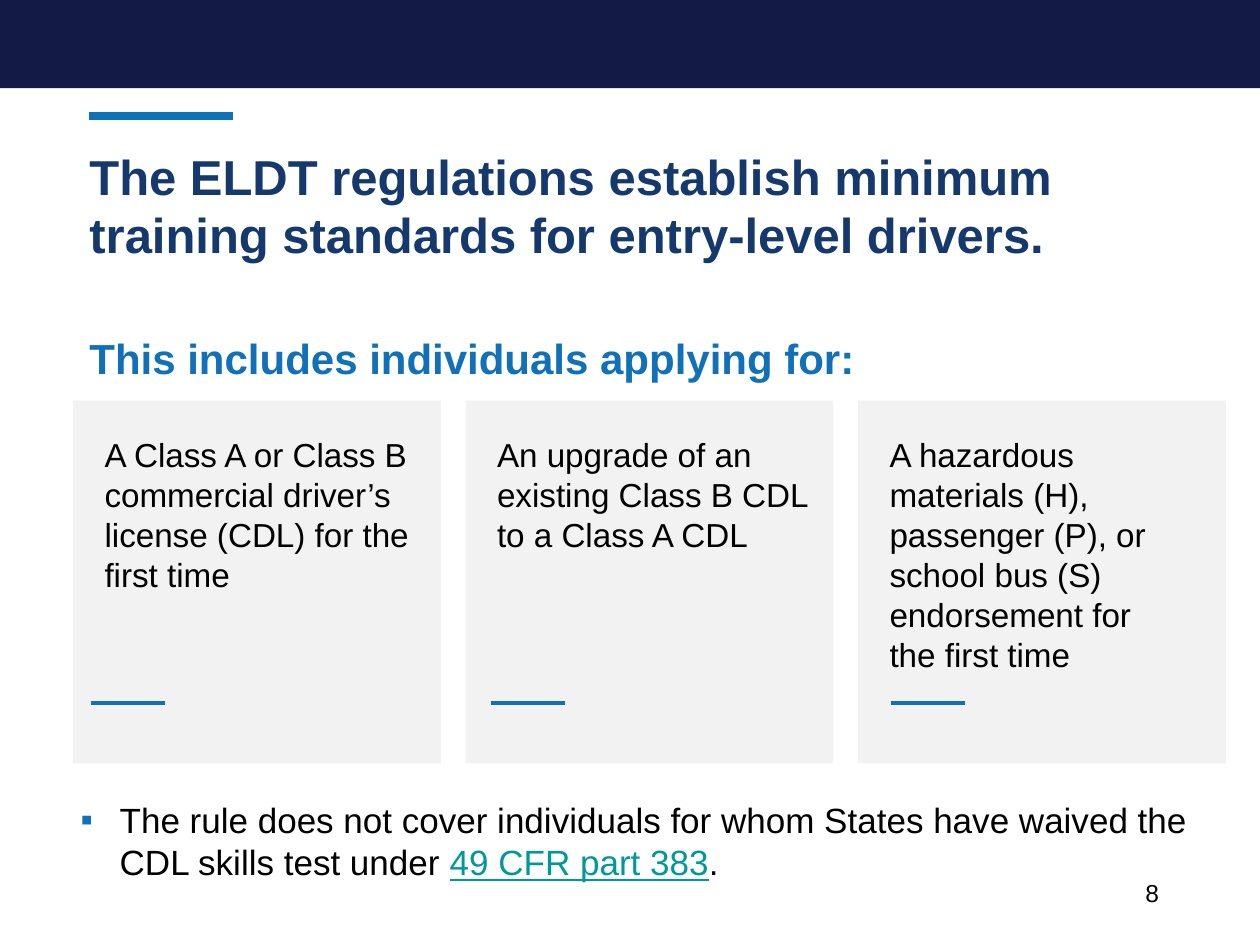
from lxml import etree
from pptx import Presentation
from pptx.dml.color import RGBColor
from pptx.enum.shapes import MSO_CONNECTOR, MSO_SHAPE
from pptx.enum.text import MSO_ANCHOR, MSO_AUTO_SIZE, PP_ALIGN
from pptx.oxml.ns import qn
from pptx.util import Inches, Pt

RECTANGLE = MSO_SHAPE.RECTANGLE
STRAIGHT = MSO_CONNECTOR.STRAIGHT
TOP = MSO_ANCHOR.TOP
LEFT = PP_ALIGN.LEFT
NO_FIT = MSO_AUTO_SIZE.NONE

WIDTH, HEIGHT = Inches(10), Inches(7.5)
COLUMN, ROW = WIDTH / 100, HEIGHT / 75

NAVY, HEADING, ACCENT = "121A45", "15396C", "1071B9"
RULE, PANEL, LINK, BLACK = "0C72B9", "F2F2F2", "009999", "000000"

HEADLINE = "The ELDT regulations establish minimum training standards for entry-level drivers."
APPLICATIONS = [
    "A Class A or Class B commercial driver’s license (CDL) for the first time",
    "An upgrade of an existing Class B CDL to a Class A CDL",
    "A hazardous materials (H), passenger (P), or school bus (S) endorsement for\nthe first time",
]
EXEMPTION = [
    ("The rule does not cover individuals for whom States have waived the CDL skills test under ", BLACK, False),
    ("49 CFR part 383", LINK, True),
    (".", BLACK, False),
]


def colour(hex_value):
    """Turn a hex string into a colour."""
    return RGBColor.from_string(hex_value)


def place(box):
    """Convert a box in grid columns and rows to slide lengths."""
    left, top, width, height = box
    return [round(n) for n in (left * COLUMN, top * ROW, width * COLUMN, height * ROW)]


def apply(target, formats):
    """Set each attribute named in a dict of format values."""
    for name, value in formats.items():
        setattr(target, name, value)


def frame(holder, insets=(0, 0, 0, 0)):
    """Prepare a wrapping, top-anchored text frame and return it."""
    left, top, right, bottom = map(Inches, insets)
    apply(holder.text_frame, dict(
        word_wrap=True, auto_size=NO_FIT, vertical_anchor=TOP, margin_left=left,
        margin_top=top, margin_right=right, margin_bottom=bottom))
    return holder.text_frame


def write(paragraph, text, size, hex_value=BLACK, bold=False, underline=False):
    """Add formatted text to a paragraph, with a line break at each newline."""
    for index, line in enumerate(text.split("\n")):
        if index:
            paragraph.add_line_break()
        run = paragraph.add_run()
        run.text = line
        apply(run.font, dict(name="Arial", size=Pt(size), bold=bold, underline=underline))
        run.font.color.rgb = colour(hex_value)


def add_panel(slide, box, hex_value):
    """Draw a plain filled rectangle."""
    panel = slide.shapes.add_shape(RECTANGLE, *place(box))
    panel.shadow.inherit = False
    panel.fill.solid()
    panel.fill.fore_color.rgb = colour(hex_value)
    panel.line.fill.background()
    return panel


def add_rule(slide, left, top, length, hex_value, weight):
    """Draw a horizontal accent rule."""
    x, y, width, _ = place((left, top, length, 0))
    rule = slide.shapes.add_connector(STRAIGHT, x, y, x + width, y)
    rule.line.color.rgb = colour(hex_value)
    rule.line.width = Pt(weight)
    etree.SubElement(rule._element.spPr, qn("a:effectLst"))


def add_banner(slide, box):
    """Draw the top band and the short rule beneath it."""
    add_panel(slide, box, NAVY)
    add_rule(slide, 7.1, box[1] + box[3] + 2.2, 11.4, RULE, 4.5)


def add_headings(slide, box):
    """Place the title and the subheading below it."""
    left, top, width, height = box
    title = slide.shapes.title
    apply(title, dict(zip(("left", "top", "width", "height"), place((left, top, width, 10)))))
    headline = frame(title).paragraphs[0]
    apply(headline, dict(alignment=LEFT, line_spacing=1.0, space_before=Pt(0)))
    write(headline, HEADLINE, 28, HEADING, bold=True)
    subheading = slide.shapes.add_textbox(*place((left, top + height - 4, width, 4)))
    write(frame(subheading).paragraphs[0], "This includes individuals applying for:", 24, ACCENT, bold=True)


def add_cards(slide, box):
    """Spread the application cards evenly across the box."""
    left, top, width, height = box
    card_width = 29.2
    pitch = (width - card_width) / (len(APPLICATIONS) - 1)
    for index, application in enumerate(APPLICATIONS):
        card = add_panel(slide, (left + index * pitch, top, card_width, height), PANEL)
        paragraph = frame(card, (0.25, 0.27, 0.1, 0.05)).paragraphs[0]
        paragraph.alignment = LEFT
        write(paragraph, application, 19)
        add_rule(slide, left + 1.4 + index * 31.75, top + 24, 5.9, ACCENT, 2.25)


def add_exemption(slide, box):
    """Write the bulleted note on who is not covered."""
    note = slide.shapes.add_textbox(*place(box))
    paragraph = frame(note).paragraphs[0]
    properties = paragraph._p.get_or_add_pPr()
    hanging = Inches(0.31)
    for name, value in dict(marL=hanging, indent=-hanging).items():
        properties.set(name, str(value))
    bullet_colour = etree.SubElement(properties, qn("a:buClr"))
    etree.SubElement(bullet_colour, qn("a:srgbClr"), val=ACCENT)
    etree.SubElement(properties, qn("a:buFont"), typeface="Arial")
    etree.SubElement(properties, qn("a:buChar"), char="▪")
    for text, hex_value, underline in EXEMPTION:
        write(paragraph, text, 20, hex_value, underline=underline)


def add_page_number(slide, box):
    """Write the page number."""
    number = slide.shapes.add_textbox(*place(box))
    write(frame(number, (0.01, 0.02, 0, 0)).paragraphs[0], "8", 14)


def main():
    """Build and save the slide."""
    deck = Presentation()
    apply(deck, dict(slide_width=WIDTH, slide_height=HEIGHT))
    slide = deck.slides.add_slide(deck.slide_layouts.get_by_name("Title Only"))
    add_banner(slide, (0, 0, 100, 7))
    add_headings(slide, (7.1, 11.6, 87.1, 18.8))
    add_cards(slide, (5.8, 31.8, 91.5, 28.8))
    add_exemption(slide, (6.4, 63.4, 90.4, 6.7))
    add_page_number(slide, (90.8, 69.5, 3.6, 4.7))
    deck.save("out.pptx")


if __name__ == "__main__":
    main()
